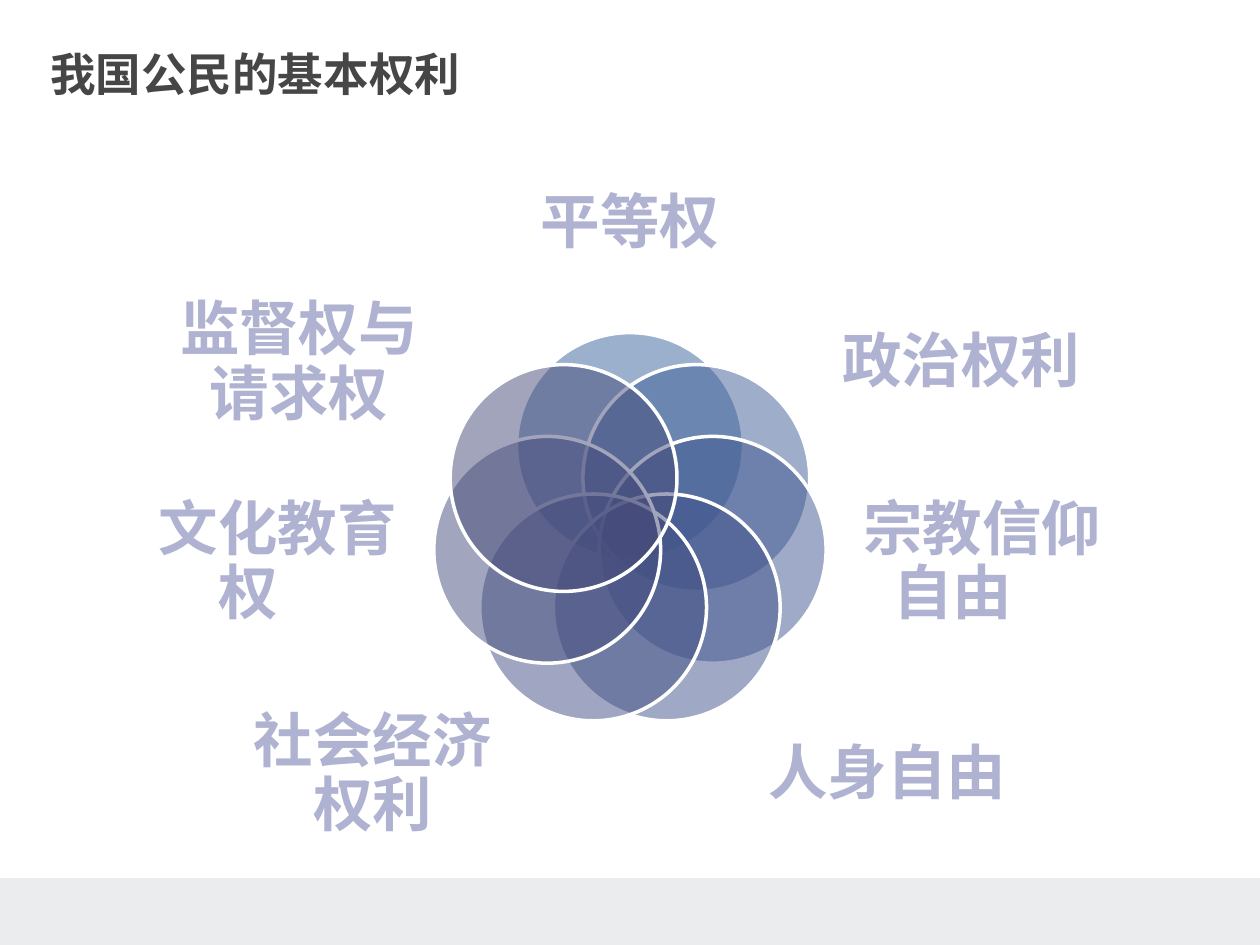
from dataclasses import dataclass
from math import cos, pi, sin

from lxml import etree
from pptx import Presentation
from pptx.dml.color import RGBColor
from pptx.enum.shapes import MSO_SHAPE
from pptx.enum.text import MSO_ANCHOR, PP_ALIGN
from pptx.oxml.ns import qn
from pptx.util import Pt

OVAL, RECTANGLE = MSO_SHAPE.OVAL, MSO_SHAPE.RECTANGLE
MIDDLE = MSO_ANCHOR.MIDDLE
LEFT, CENTER = PP_ALIGN.LEFT, PP_ALIGN.CENTER
TITLE_ONLY = 5
PAGE_WIDTH, PAGE_HEIGHT = 720, 540
FOOTER_HEIGHT = 38.2
RING_CENTER_X, RING_CENTER_Y = 360, 303.4
RING_RADIUS = 48.5
CIRCLE_SIZE = 129.6


@dataclass(frozen=True)
class Theme:
    title_color: str = "464646"
    label_color: str = "AFB2D0"
    outline_color: str = "FFFFFF"
    footer_color: str = "EBECED"
    title_font: str = "Arial"
    label_font: str = "Noto Sans CJK SC"
    title_size: float = 26
    label_size: float = 34
    outline_width: float = 2
    circle_opacity: int = 50


@dataclass(frozen=True)
class Area:
    left: float
    top: float
    width: float
    height: float

    def lengths(self) -> tuple:
        return Pt(self.left), Pt(self.top), Pt(self.width), Pt(self.height)

    def mirrored(self) -> "Area":
        return Area(PAGE_WIDTH - self.left - self.width, self.top, self.width, self.height)


@dataclass(frozen=True)
class Right:
    name: str
    color: str
    area: Area


THEME = Theme()
TOP = Area(286, 88.6, 148, 79.2)
UPPER = Area(479, 164.2, 140.4, 87.1)
MIDDLE_ROW = Area(492.5, 275, 137.5, 93.6)
LOWER = Area(433, 400.3, 148, 85.7)

# Clockwise from the top; the full-width space sets the second line off centre.
RIGHTS = [
    Right("平等权", "39639D", TOP),
    Right("政治权利", "3C5D96", UPPER),
    Right("宗教信仰自由　", "3E5790", MIDDLE_ROW),
    Right("人身自由", "41538A", LOWER),
    Right("社会经济权利", "434F84", LOWER.mirrored()),
    Right("文化教育权　", "454D7E", MIDDLE_ROW.mirrored()),
    Right("监督权与请求权", "474B78", UPPER.mirrored()),
]


def write_text(box, text: str, *, font: str, size: float, color: str,
               align: PP_ALIGN, line_spacing: float = 1.0) -> None:
    frame = box.text_frame
    frame.word_wrap = True
    frame.vertical_anchor = MIDDLE
    frame.margin_left = frame.margin_right = frame.margin_top = frame.margin_bottom = 0
    para = frame.paragraphs[0]
    para.alignment = align
    para.line_spacing = line_spacing
    span = para.add_run()
    span.text = text
    span.font.name = font
    span.font.size = Pt(size)
    span.font.bold = True
    span.font.color.rgb = RGBColor.from_string(color)
    east_asian = etree.SubElement(span.font._element, qn("a:ea"))
    east_asian.set("typeface", font)


def add_filled(shapes, kind: MSO_SHAPE, area: Area, color: str):
    shape = shapes.add_shape(kind, *area.lengths())
    shape.shadow.inherit = False
    shape.fill.solid()
    shape.fill.fore_color.rgb = RGBColor.from_string(color)
    shape.line.fill.background()
    return shape


def add_circle(shapes, index: int, color: str) -> None:
    """Place one translucent circle at its step around the ring."""
    angle = 2 * pi * index / len(RIGHTS)
    left = RING_CENTER_X + RING_RADIUS * sin(angle) - CIRCLE_SIZE / 2
    top = RING_CENTER_Y - RING_RADIUS * cos(angle) - CIRCLE_SIZE / 2
    circle = add_filled(shapes, OVAL, Area(left, top, CIRCLE_SIZE, CIRCLE_SIZE), color)
    circle.line.color.rgb = RGBColor.from_string(THEME.outline_color)
    circle.line.width = Pt(THEME.outline_width)
    fill_color = circle._element.spPr.find(qn("a:solidFill")).find(qn("a:srgbClr"))
    alpha = etree.SubElement(fill_color, qn("a:alpha"))
    alpha.set("val", str(THEME.circle_opacity * 1000))


def add_label(shapes, right: Right) -> None:
    box = shapes.add_textbox(*right.area.lengths())
    write_text(box, right.name, font=THEME.label_font, size=THEME.label_size,
               color=THEME.label_color, align=CENTER, line_spacing=0.9)


def main() -> None:
    deck = Presentation()
    deck.slide_width, deck.slide_height = Pt(PAGE_WIDTH), Pt(PAGE_HEIGHT)
    page = deck.slides.add_slide(deck.slide_layouts[TITLE_ONLY])

    footer = Area(0, PAGE_HEIGHT - FOOTER_HEIGHT, PAGE_WIDTH, FOOTER_HEIGHT)
    add_filled(page.shapes, RECTANGLE, footer, THEME.footer_color)

    title = page.shapes.title
    title.left, title.top, title.width, title.height = Area(28.8, 26.6, 662.4, 31).lengths()
    write_text(title, "我国公民的基本权利", font=THEME.title_font, size=THEME.title_size,
               color=THEME.title_color, align=LEFT)

    diagram = page.shapes.add_group_shape()
    for index, right in enumerate(RIGHTS):
        add_circle(diagram.shapes, index, right.color)
        add_label(diagram.shapes, right)

    deck.save("out.pptx")


if __name__ == "__main__":
    main()
